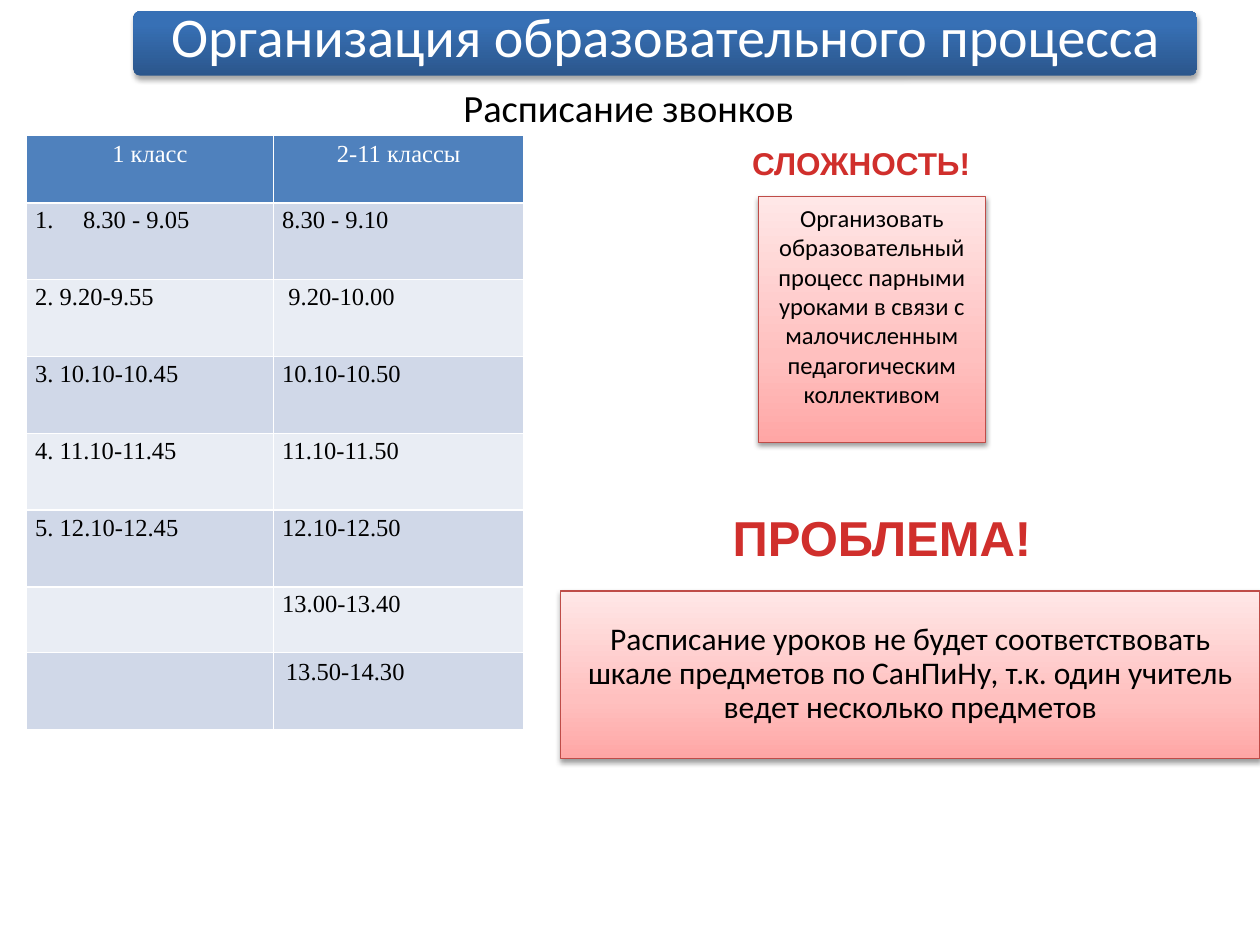
from lxml import etree
from pptx import Presentation
from pptx.dml.color import RGBColor
from pptx.enum.shapes import MSO_SHAPE as Shape
from pptx.enum.text import MSO_ANCHOR as Anchor, MSO_AUTO_SIZE as AutoSize, PP_ALIGN as Align
from pptx.oxml import parse_xml
from pptx.oxml.ns import nsdecls, qn
from pptx.util import Inches, Pt

BLUE_STOPS = [(0, "2B568C"), (80, "3770B5"), (100, "3570B8")]
PINK_STOPS = [(0, "FFA6A5"), (35, "FFC0BF"), (100, "FFE7E7")]
HEADER_FILL = "4F81BD"
BAND_FILLS = ["D0D8E8", "E9EDF4"]
WARNING_RED = "D02F2C"
PINK_BORDER = "BF4C48"


def color(hex_text):
    return RGBColor.from_string(hex_text)


class SlideBuilder:
    body_font = "Calibri"
    heading_font = "Arial"
    table_font = "Times New Roman"

    def __init__(self, slide):
        self.slide = slide

    def set_text(self, frame, text, size, font, hex_text="000000", bold=False,
                 align=Align.CENTER, spacing=None):
        frame.text = text
        paragraph = frame.paragraphs[0]
        paragraph.alignment = align
        if spacing:
            paragraph.line_spacing = spacing
        for run in paragraph.runs:
            run.font.name = font
            run.font.size = Pt(size)
            run.font.bold = bold
            run.font.color.rgb = color(hex_text)

    def panel(self, kind, box, stops, shadow_alpha, shadow_distance, border=None):
        panel = self.slide.shapes.add_shape(kind, *map(Inches, box))
        panel.shadow.inherit = False
        panel.fill.background()
        if border:
            panel.line.color.rgb = color(border)
            panel.line.width = Pt(0.75)
        else:
            panel.line.fill.background()
        properties = panel.element.spPr
        stop_xml = "".join(
            f'<a:gs pos="{position * 1000}"><a:srgbClr val="{tone}"/></a:gs>'
            for position, tone in stops)
        gradient = parse_xml(
            f'<a:gradFill {nsdecls("a")} rotWithShape="1"><a:gsLst>{stop_xml}</a:gsLst>'
            '<a:lin ang="16200000" scaled="0"/></a:gradFill>')
        properties.replace(properties.find(qn("a:noFill")), gradient)
        properties.find(qn("a:effectLst")).append(parse_xml(
            f'<a:outerShdw {nsdecls("a")} blurRad="{Pt(3.1)}" dist="{Pt(shadow_distance)}" '
            'dir="5400000" rotWithShape="0"><a:srgbClr val="000000">'
            f'<a:alpha val="{shadow_alpha * 1000}"/></a:srgbClr></a:outerShdw>'))
        return panel

    def title(self, text, box):
        bar = self.panel(Shape.ROUNDED_RECTANGLE, (1.06, 0.09, 8.44, 0.51), BLUE_STOPS, 35, 1.8)
        bar.adjustments[0] = 0.1
        title = self.slide.shapes.title
        title.left, title.top, title.width, title.height = map(Inches, box)
        bar.element.addnext(title.element)
        frame = title.text_frame
        frame.auto_size = AutoSize.NONE
        frame.vertical_anchor = Anchor.MIDDLE
        frame.margin_left = frame.margin_right = Inches(0.08)
        frame.margin_top = frame.margin_bottom = Inches(0.06)
        self.set_text(frame, text, 32, self.body_font, "FFFFFF", spacing=0.9)

    def note(self, text, box, size, anchor, spacing=None):
        note = self.panel(Shape.RECTANGLE, box, PINK_STOPS, 38, 1.6, PINK_BORDER)
        note.text_frame.word_wrap = True
        note.text_frame.vertical_anchor = anchor
        self.set_text(note.text_frame, text, size, self.body_font, spacing=spacing)

    def label(self, text, box, size, font, hex_text="000000", bold=False, wrap=True):
        label = self.slide.shapes.add_textbox(*map(Inches, box))
        frame = label.text_frame
        frame.word_wrap = wrap
        if not wrap:
            frame.auto_size = AutoSize.SHAPE_TO_FIT_TEXT
        self.set_text(frame, text, size, font, hex_text, bold)

    def warning(self, text, box, size):
        self.label(text, box, size, self.heading_font, WARNING_RED, True, False)

    def timetable(self, rows, box, widths, heights):
        table = self.slide.shapes.add_table(len(rows), len(widths), *map(Inches, box)).table
        for column, width in zip(table.columns, widths):
            column.width = Inches(width)
        for row, height in zip(table.rows, heights):
            row.height = Inches(height)
        for row_index, row in enumerate(rows):
            for column_index, text in enumerate(row):
                cell = table.cell(row_index, column_index)
                self.timetable_cell(cell, text, row_index, row_index == len(rows) - 1)
        return table

    def timetable_cell(self, cell, text, row_index, is_last):
        is_header = row_index == 0
        cell.fill.solid()
        cell.fill.fore_color.rgb = color(
            HEADER_FILL if is_header else BAND_FILLS[(row_index - 1) % 2])
        if not text:
            return
        if is_header:
            self.set_text(cell.text_frame, text, 14, self.table_font, "FFFFFF")
            return
        if not is_last:
            cell.margin_left = cell.margin_right = Inches(0.07)
            cell.margin_top = cell.margin_bottom = 0
        self.set_text(cell.text_frame, text, 14, self.table_font, align=Align.LEFT,
                      spacing=None if is_last else 1.15)

    def number(self, paragraph, indent):
        properties = paragraph._p.get_or_add_pPr()
        properties.set("marL", str(Inches(indent)))
        properties.set("indent", str(-Inches(indent)))
        etree.SubElement(properties, qn("a:buFont"), typeface="+mj-lt")
        etree.SubElement(properties, qn("a:buAutoNum"), type="arabicPeriod")


def main():
    deck = Presentation()
    deck.slide_width, deck.slide_height = Inches(10), Inches(7.5)
    builder = SlideBuilder(deck.slides.add_slide(deck.slide_layouts[5]))

    bell_times = [
        ("1 класс", "2-11 классы"),
        ("8.30 - 9.05", "8.30 - 9.10"),
        ("2. 9.20-9.55", "9.20-10.00"),
        ("3. 10.10-10.45", "10.10-10.50"),
        ("4. 11.10-11.45", "11.10-11.50"),
        ("5. 12.10-12.45", "12.10-12.50"),
        ("", "13.00-13.40"),
        ("", "13.50-14.30"),
    ]
    timetable = builder.timetable(bell_times, (0.21, 1.07, 3.95, 4.73), (1.96, 1.99),
                                  [0.54] + [0.61] * 5 + [0.52, 0.61])
    builder.number(timetable.cell(1, 0).text_frame.paragraphs[0], 0.38)
    timetable.cell(2, 1).margin_left = Inches(0.12)

    builder.label("Расписание звонков", (0.34, 0.62, 9.3, 0.54), 22, builder.body_font)
    builder.title("Организация образовательного процесса", (1.11, 0.11, 8.35, 0.41))
    builder.note("Расписание уроков не будет соответствовать шкале предметов по СанПиНу, "
                 "т.к. один учитель ведет несколько предметов",
                 (4.45, 4.69, 5.55, 1.33), 18, Anchor.MIDDLE, 0.9)
    builder.note("Организовать образовательный процесс парными уроками в связи с "
                 "малочисленным педагогическим коллективом",
                 (6.02, 1.56, 1.8, 1.95), 14, Anchor.TOP)
    builder.warning("ПРОБЛЕМА!", (5.7, 3.98, 2.6, 0.57), 28)
    builder.warning("СЛОЖНОСТЬ!", (5.86, 1.09, 1.95, 0.4), 18)

    deck.save("out.pptx")


if __name__ == "__main__":
    main()
